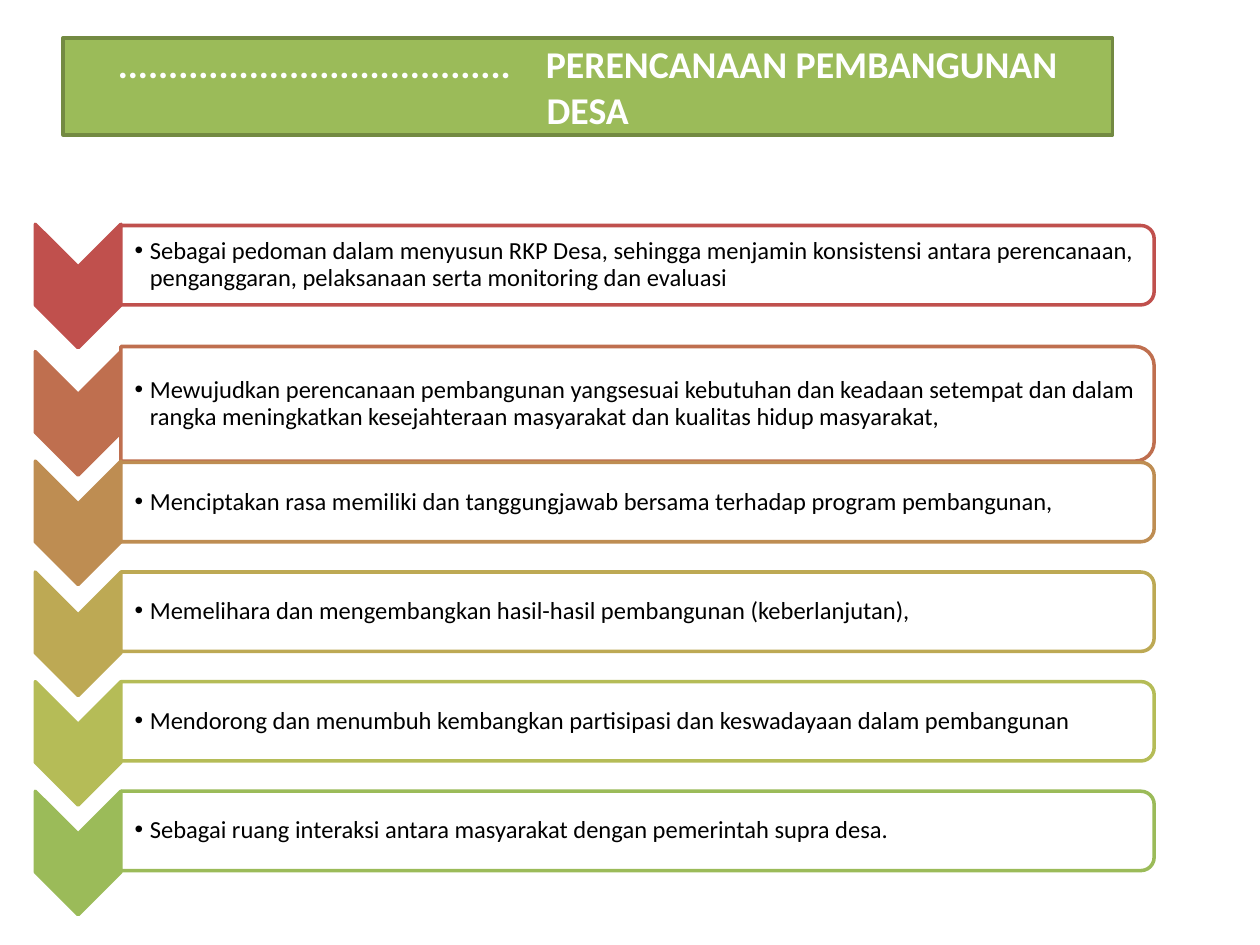
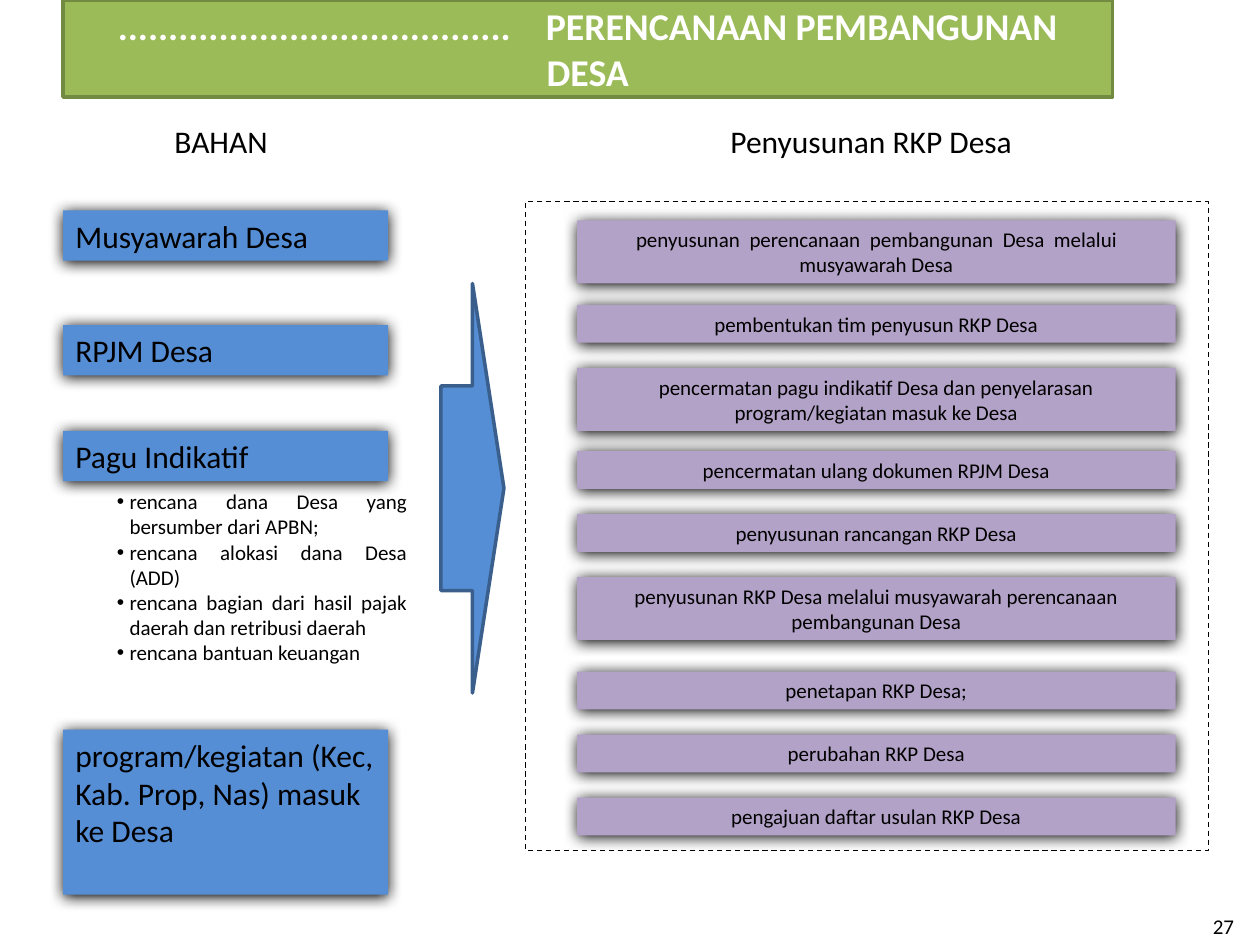
from pptx import Presentation
from pptx import util as u
from pptx.dml.color import RGBColor
from pptx.enum import dml, shapes, text
from pptx.oxml import parse_xml
from pptx.oxml.ns import nsdecls, qn

PX = 9144  # EMU per px, 100 px to the inch

BLACK = RGBColor(0, 0, 0)
WHITE = RGBColor(255, 255, 255)
GREEN = RGBColor(0x9B, 0xBB, 0x59)
DARK_GREEN = RGBColor(0x73, 0x8A, 0x42)
BLUE = RGBColor(0x55, 0x8E, 0xD5)
DARK_BLUE = RGBColor(0x3A, 0x5F, 0x8C)
PURPLE = RGBColor(0xB3, 0xA2, 0xC7)
RED = RGBColor(0xC0, 0x50, 0x4D)
RUST = RGBColor(0xBF, 0x6F, 0x4F)
OCHRE = RGBColor(0xBE, 0x8D, 0x52)
GOLD = RGBColor(0xBD, 0xA9, 0x54)
LIME = RGBColor(0xB5, 0xBC, 0x57)

KIND = shapes.MSO_SHAPE
ALIGN = text.PP_ALIGN
ANCHOR = text.MSO_ANCHOR

# A "|" stands for one widened space
TITLE = ".......................................|PERENCANAAN PEMBANGUNAN DESA"

# Colour, chevron top, box top, box height, text
BENEFITS = [
    (RED, 178, 179, 63, "Sebagai pedoman dalam menyusun RKP Desa, sehingga menjamin konsistensi "
     "antara perencanaan, penganggaran, pelaksanaan serta monitoring dan evaluasi"),
    (RUST, 279, 275, 91, "Mewujudkan perencanaan pembangunan yangsesuai kebutuhan dan keadaan "
     "setempat dan dalam rangka meningkatkan kesejahteraan masyarakat dan kualitas hidup masyarakat,"),
    (OCHRE, 366, 367, 63, "Menciptakan rasa memiliki dan tanggungjawab bersama terhadap program "
     "pembangunan,"),
    (GOLD, 454, 454, 63, "Memelihara dan mengembangkan hasil-hasil pembangunan (keberlanjutan),"),
    (LIME, 541, 541, 63, "Mendorong dan menumbuh kembangkan partisipasi dan keswadayaan dalam "
     "pembangunan"),
    (GREEN, 628, 628, 63, "Sebagai ruang interaksi antara masyarakat dengan pemerintah supra desa."),
]

# Top, height, text
MATERIALS = [
    (167, 40, "Musyawarah Desa"),
    (258, 40, "RPJM Desa"),
    (342, 40, "Pagu Indikatif"),
    (579, 131, "program/kegiatan (Kec, Kab. Prop, Nas) masuk ke Desa"),
]
FUNDS = [
    "rencana dana Desa yang bersumber dari APBN;",
    "rencana alokasi dana Desa (ADD)",
    "rencana bagian dari hasil pajak daerah dan retribusi daerah",
    "rencana bantuan keuangan",
]
STEPS = [
    (175, 50, "penyusunan|perencanaan|pembangunan|Desa|melalui|musyawarah Desa"),
    (242, 30, "pembentukan tim penyusun RKP Desa"),
    (292, 50, "pencermatan pagu indikatif Desa dan penyelarasan program/kegiatan masuk ke Desa"),
    (358, 30, "pencermatan ulang dokumen RPJM Desa"),
    (408, 30, "penyusunan rancangan RKP Desa"),
    (458, 50, "penyusunan RKP Desa melalui musyawarah perencanaan pembangunan Desa"),
    (533, 30, "penetapan RKP Desa;"),
    (583, 30, "perubahan RKP Desa"),
    (633, 30, "pengajuan daftar usulan RKP Desa"),
]


def apply(target, values):
    for name, value in values.items():
        setattr(target, name, value)


def px(*lengths):
    return [round(length * PX) for length in lengths]


class Painter:
    """Holds the style and the current slide."""

    font = {"name": "Calibri", "bold": False}
    frame = {"word_wrap": True, "auto_size": text.MSO_AUTO_SIZE.NONE}

    def __init__(self, deck):
        self.deck = deck
        self.slide = None

    def new_slide(self, title_top):
        self.slide = self.deck.slides.add_slide(self.deck.slide_layouts[5])
        title = self.slide.shapes.title
        apply(title, dict(zip(("left", "top", "width", "height"), px(50, title_top, 833, 77))))
        self.paint(title, GREEN, DARK_GREEN)
        self.fill_text(title, [TITLE], 21.6, WHITE, ALIGN.CENTER, ANCHOR.MIDDLE,
                       gap=1470, bold=True)

    def paint(self, shape, fill=None, line=None, width=2.0):
        if fill is None:
            shape.fill.background()
        else:
            shape.fill.solid()
            shape.fill.fore_color.rgb = fill
        if line is None:
            shape.line.fill.background()
        else:
            shape.line.color.rgb = line
            shape.line.width = u.Pt(width)

    def shape(self, kind, left, top, width, height, fill=None, line=None, line_width=2.0):
        shape = self.slide.shapes.add_shape(kind, *px(left, top, width, height))
        shape.shadow.inherit = False
        self.paint(shape, fill, line, line_width)
        return shape

    def turned(self, kind, left, top, width, height, fill, line):
        """Places a shape by the area it covers after a quarter turn."""
        shift = (width - height) / 2
        shape = self.shape(kind, left + shift, top - shift, height, width, fill, line)
        shape.rotation = 90

    def card(self, left, top, width, height, fill, words, size, align):
        card = self.shape(KIND.RECTANGLE, left, top, width, height, fill)
        effects = card._element.spPr.find(qn("a:effectLst"))
        effects.append(parse_xml(
            f'<a:outerShdw {nsdecls("a")} blurRad="107950" dist="12700" dir="5400000" '
            'algn="ctr" rotWithShape="0"><a:srgbClr val="000000"/></a:outerShdw>'))
        self.fill_text(card, [words], size, align=align, gap=270)

    def text(self, left, top, width, height, lines, size, **style):
        box = self.slide.shapes.add_textbox(*px(left, top, width, height))
        self.fill_text(box, lines, size, **style)
        return box

    def fill_text(self, shape, lines, size, color=BLACK, align=ALIGN.LEFT, anchor=ANCHOR.TOP,
                  indent=0, gap=0, spacing=1.0, bold=False):
        frame = shape.text_frame
        apply(frame, {**self.frame, "vertical_anchor": anchor})
        for index, line in enumerate(lines):
            para = frame.add_paragraph() if index else frame.paragraphs[0]
            apply(para, {"alignment": align, "line_spacing": spacing})
            if indent:
                self.bullet(para, indent)
            for order, part in enumerate(line.split("|")):
                if order:
                    space = self.span(para, " ", size, color, bold)
                    space._r.get_or_add_rPr().set("spc", str(gap))
                self.span(para, part, size, color, bold)

    def span(self, para, words, size, color, bold):
        span = para.add_run()
        span.text = words
        apply(span.font, {**self.font, "size": u.Pt(size), "bold": bold})
        span.font.color.rgb = color
        return span

    def bullet(self, para, indent):
        props = para._p.get_or_add_pPr()
        props.set("marL", str(indent * PX))
        props.set("indent", str(-indent * PX))
        props.append(parse_xml(f'<a:buFont {nsdecls("a")} typeface="Arial"/>'))
        props.append(parse_xml(f'<a:buChar {nsdecls("a")} char="•"/>'))


def benefits_slide(painter):
    painter.new_slide(30)
    for color, chevron_top, top, height, words in BENEFITS:
        painter.turned(KIND.CHEVRON, 28, chevron_top, 68, 98, color, color)
        painter.turned(KIND.ROUND_2_SAME_RECTANGLE, 96, top, 820, height, WHITE, color)
        box = painter.text(96, top + 3, 817, height - 6, [words], 14,
                           anchor=ANCHOR.MIDDLE, indent=12, spacing=0.9)
        apply(box.text_frame, {"margin_left": 11 * PX, "margin_right": PX,
                               "margin_top": PX, "margin_bottom": PX})


def work_plan_slide(painter):
    painter.new_slide(0)
    # Column headings
    painter.text(67, 92, 217, 40, ["BAHAN"], 18, align=ALIGN.CENTER)
    painter.text(550, 92, 283, 40, ["Penyusunan RKP Desa"], 18, align=ALIGN.CENTER)
    # Materials
    for top, height, words in MATERIALS:
        painter.card(50, top, 258, height, BLUE, words, 18, ALIGN.LEFT)
    painter.text(83, 383, 250, 172, FUNDS, 12, align=ALIGN.JUSTIFY, indent=10)
    # Arrow into the framed steps
    border = painter.shape(KIND.RECTANGLE, 417, 160, 542, 515, line=BLACK, line_width=0.75)
    border.line.dash_style = dml.MSO_LINE.DASH
    painter.shape(KIND.RIGHT_ARROW, 350, 225, 50, 325, BLUE, DARK_BLUE)
    for top, height, words in STEPS:
        painter.card(458, top, 475, height, PURPLE, words, 12, ALIGN.CENTER)
    # Page number
    painter.text(942, 720, 58, 30, ["27"], 12, align=ALIGN.CENTER)


def main():
    deck = Presentation()
    deck.slide_width, deck.slide_height = px(1000, 750)
    painter = Painter(deck)
    benefits_slide(painter)
    work_plan_slide(painter)
    deck.save("out.pptx")


if __name__ == "__main__":
    main()
